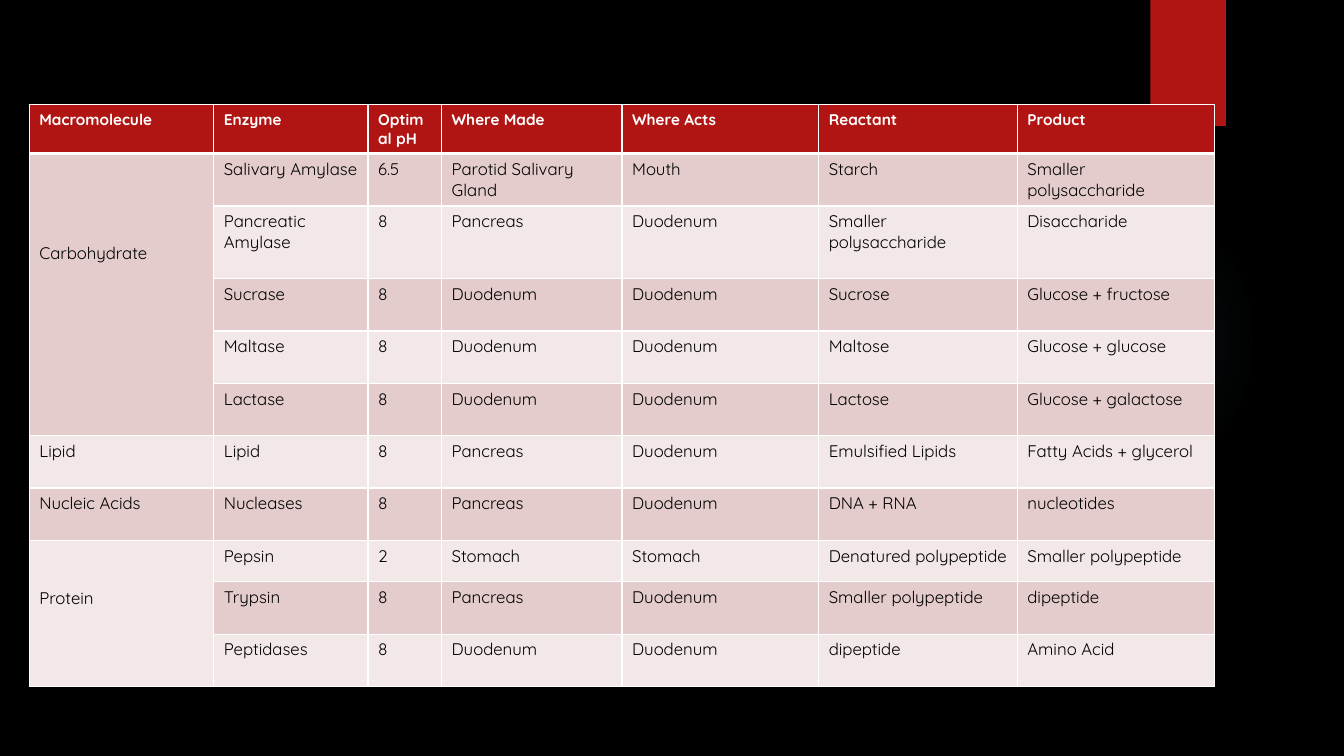
from lxml.etree import SubElement
from pptx import Presentation
from pptx.dml.color import RGBColor
from pptx.enum.shapes import MSO_SHAPE
from pptx.oxml import parse_xml
from pptx.oxml.ns import nsdecls, qn
from pptx.util import Inches, Pt

RED, WHITE, BLACK = "B01513", "FFFFFF", "000000"
BANDS = ["F2E8E7", "E4CCCC"]


def paint(fill, color):
    fill.solid()
    fill.fore_color.rgb = RGBColor.from_string(color)


def add_border(cell, side, width):
    line = SubElement(cell._tc.get_or_add_tcPr(), qn(f"a:ln{side}"), w=str(Pt(width)))
    SubElement(SubElement(line, qn("a:solidFill")), qn("a:srgbClr"), val=WHITE)


presentation = Presentation()
presentation.slide_width = Inches(13.33)
presentation.slide_height = Inches(7.5)
slide = presentation.slides.add_slide(presentation.slide_layouts[6])
paint(slide.background.fill, BLACK)

# Faint teal glow
glow = slide.shapes.add_shape(
    MSO_SHAPE.OVAL, Inches(9.41), Inches(1.83), Inches(3.08), Inches(3.08))
glow.shadow.inherit = False
glow.line.fill.background()
stops = "".join(
    f'<a:gs pos="{position}000"><a:srgbClr val="50B9C1"><a:alpha val="{alpha}000"/></a:srgbClr></a:gs>'
    for position, alpha in [(0, 7), (36, 6), (69, 0)])
glow._element.spPr.find(qn("a:prstGeom")).addnext(parse_xml(
    f'<a:gradFill {nsdecls("a")}><a:gsLst>{stops}</a:gsLst><a:path path="circle">'
    '<a:fillToRect l="50000" t="50000" r="50000" b="50000"/></a:path></a:gradFill>'))

# Red tab at the top
tab = slide.shapes.add_shape(
    MSO_SHAPE.RECTANGLE, Inches(11.41), 0, Inches(0.75), Inches(1.25))
tab.shadow.inherit = False
tab.line.fill.background()
paint(tab.fill, RED)

# Enzyme table
rows = [
    ["Macromolecule", "Enzyme", "Optimal pH", "Where Made", "Where Acts", "Reactant", "Product"],
    ["Carbohydrate", "Salivary Amylase", "6.5", "Parotid Salivary Gland", "Mouth", "Starch",
     "Smaller polysaccharide"],
    ["", "Pancreatic Amylase", "8", "Pancreas", "Duodenum", "Smaller polysaccharide", "Disaccharide"],
    ["", "Sucrase", "8", "Duodenum", "Duodenum", "Sucrose", "Glucose + fructose"],
    ["", "Maltase", "8", "Duodenum", "Duodenum", "Maltose", "Glucose + glucose"],
    ["", "Lactase", "8", "Duodenum", "Duodenum", "Lactose", "Glucose + galactose"],
    ["Lipid", "Lipid", "8", "Pancreas", "Duodenum", "Emulsified Lipids", "Fatty Acids + glycerol"],
    ["Nucleic Acids", "Nucleases", "8", "Pancreas", "Duodenum", "DNA + RNA", "nucleotides"],
    ["Protein", "Pepsin", "2", "Stomach", "Stomach", "Denatured polypeptide", "Smaller polypeptide"],
    ["", "Trypsin", "8", "Pancreas", "Duodenum", "Smaller polypeptide", "dipeptide"],
    ["", "Peptidases", "8", "Duodenum", "Duodenum", "dipeptide", "Amino Acid"],
]
column_widths = [1.83, 1.53, 0.73, 1.79, 1.95, 1.97, 1.96]
row_heights = [0.48, 0.52, 0.72] + [0.52] * 5 + [0.41] + [0.52] * 2

table = slide.shapes.add_table(
    len(rows), len(column_widths), Inches(0.29), Inches(1.04),
    Inches(sum(column_widths)), Inches(sum(row_heights))).table
for column, width in zip(table.columns, column_widths):
    column.width = Inches(width)
for row, height in zip(table.rows, row_heights):
    row.height = Inches(height)

for row_index, texts in enumerate(rows):
    header = row_index == 0
    for column_index, text in enumerate(texts):
        cell = table.cell(row_index, column_index)
        add_border(cell, "L", 1)
        add_border(cell, "R", 1)
        add_border(cell, "T", 3 if row_index == 1 else 1)
        add_border(cell, "B", 3 if header else 1)
        paint(cell.fill, RED if header else BANDS[row_index % 2])
        cell.text = text
        font = cell.text_frame.paragraphs[0].font
        font.name = "Quicksand"
        font.size = Pt(11 if header else 12)
        font.bold = header
        font.color.rgb = RGBColor.from_string(WHITE if header else BLACK)

# Macromolecules that span several enzymes, with their label lowered
for first, last, top_margin in [(1, 5, 0.88), (8, 10, 0.47)]:
    group = table.cell(first, 0)
    group.merge(table.cell(last, 0))
    group.margin_top = Inches(top_margin)

presentation.save("out.pptx")
